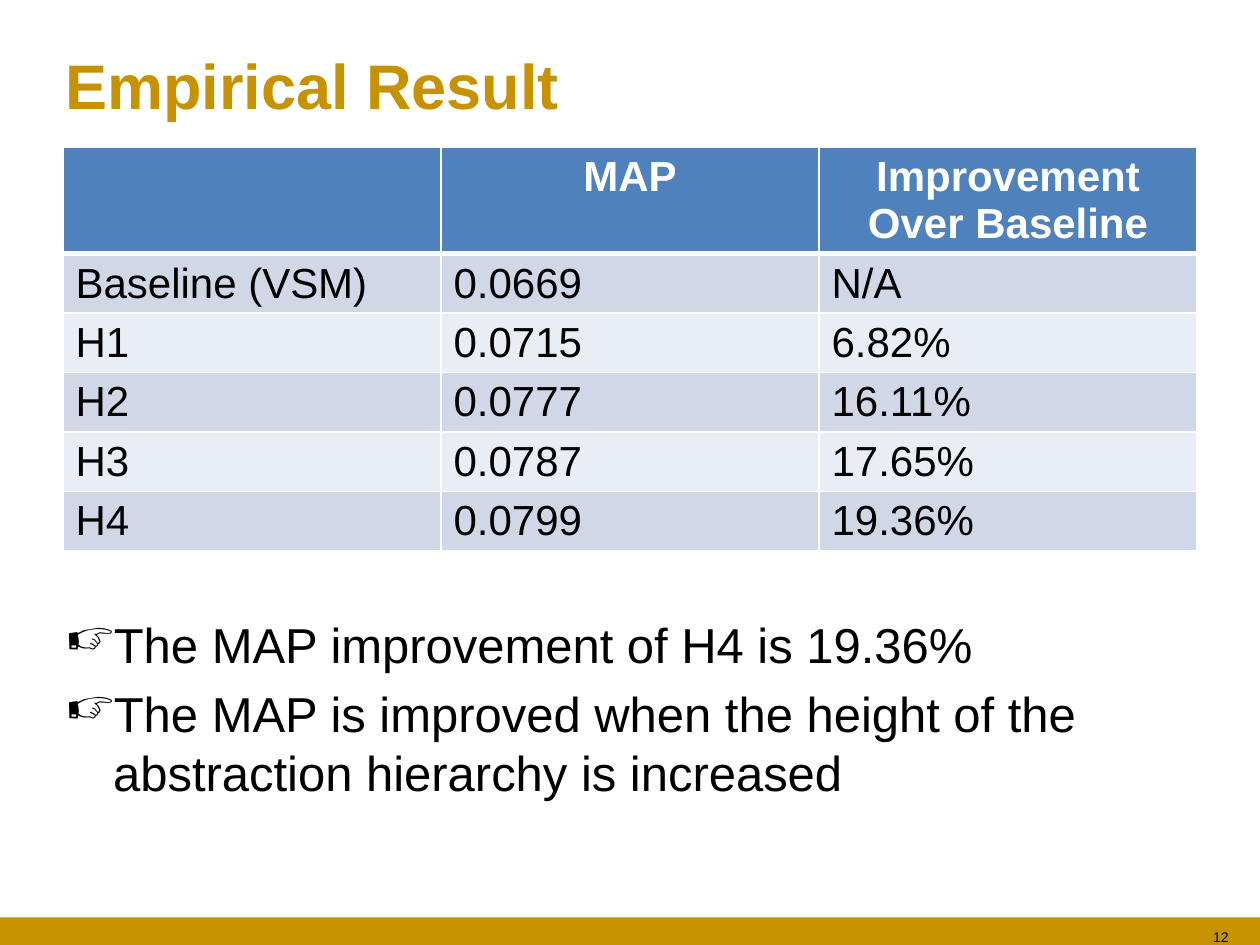
from dataclasses import dataclass
from typing import NamedTuple

from lxml.etree import SubElement
from pptx import Presentation
from pptx.dml.color import RGBColor as Rgb
from pptx.enum.shapes import MSO_SHAPE as Shape
from pptx.enum.text import MSO_ANCHOR as Anchor, PP_ALIGN as Align
from pptx.oxml.ns import qn
from pptx.util import Emu, Inches, Pt

WIDTH, HEIGHT = Inches(10), Inches(7.5)


@dataclass(frozen=True)
class Theme:
    font: str = "Arial"
    gold: str = "C69200"
    header: str = "4F81BD"
    bands: tuple = ("D0D8E8", "E9EDF4")
    white: str = "FFFFFF"
    black: str = "000000"
    title_size: int = 36
    body_size: int = 28
    table_size: int = 24
    number_size: int = 8


class Area(NamedTuple):
    """A box given as shares of the slide's width and height."""
    left: float
    top: float
    width: float
    height: float

    def box(self) -> tuple:
        return (Emu(round(self.left * WIDTH)), Emu(round(self.top * HEIGHT)),
                Emu(round(self.width * WIDTH)), Emu(round(self.height * HEIGHT)))


class Result(NamedTuple):
    method: str
    precision: str
    improvement: str


THEME = Theme()
TITLE_AREA = Area(0.042, 0.32 / 7.5, 0.908, 0.7 / 7.5)
TABLE_AREA = Area(0.05, 1.17 / 7.5, 0.9, 3.19 / 7.5)
FINDINGS_AREA = Area(0.042, 4.83 / 7.5, 0.9, 2.17 / 7.5)
FOOTER_AREA = Area(0, 7.28 / 7.5, 1, 0.25 / 7.5)
NUMBER_AREA = Area(0.843, 7.32 / 7.5, 0.142, 0.25 / 7.5)
HEADER_SHARE = 0.26

RESULTS = [
    Result("", "MAP", "Improvement Over Baseline"),
    Result("Baseline (VSM)", "0.0669", "N/A"),
    Result("H1", "0.0715", "6.82%"),
    Result("H2", "0.0777", "16.11%"),
    Result("H3", "0.0787", "17.65%"),
    Result("H4", "0.0799", "19.36%"),
]
FINDINGS = [
    "The MAP improvement of H4 is 19.36%",
    "The MAP is improved when the height of the abstraction hierarchy is increased",
]


def write(frame, *lines: str, size: int, color: str = THEME.black,
          bold: bool = False, align=Align.LEFT, bullet: str = "",
          anchor=Anchor.TOP) -> None:
    frame.word_wrap = True
    frame.vertical_anchor = anchor
    for index, line in enumerate(lines):
        paragraph = frame.add_paragraph() if index else frame.paragraphs[0]
        paragraph.alignment = align
        if bullet:
            properties = paragraph._p.get_or_add_pPr()
            properties.set("marL", str(Inches(0.38)))
            properties.set("indent", str(-Inches(0.38)))
            SubElement(properties, qn("a:buChar"), char=bullet)
            if index:
                paragraph.space_before = Pt(size * 0.2)
        run = paragraph.add_run()
        run.text = line
        run.font.name, run.font.size, run.font.bold = THEME.font, Pt(size), bold
        run.font.color.rgb = Rgb.from_string(color)


def add_text(slide, area: Area, *lines: str, **style) -> None:
    write(slide.shapes.add_textbox(*area.box()).text_frame, *lines, **style)


def add_title(slide, text: str) -> None:
    title = slide.shapes.title
    title.left, title.top, title.width, title.height = TITLE_AREA.box()
    write(title.text_frame, text, size=THEME.title_size, color=THEME.gold,
          bold=True, anchor=Anchor.MIDDLE)


def set_borders(cell, top: int, bottom: int) -> None:
    properties = cell._tc.get_or_add_tcPr()
    for side, points in (("L", 1), ("R", 1), ("T", top), ("B", bottom)):
        line = SubElement(properties, qn(f"a:ln{side}"), w=str(Pt(points)))
        fill = SubElement(line, qn("a:solidFill"))
        SubElement(fill, qn("a:srgbClr"), val=THEME.white)


def add_results(slide, results: list[Result]) -> None:
    box = TABLE_AREA.box()
    table = slide.shapes.add_table(len(results), len(Result._fields), *box).table
    header_height = round(box[3] * HEADER_SHARE)
    body_height = (box[3] - header_height) // (len(results) - 1)
    for row, result in enumerate(results):
        is_header = row == 0
        table.rows[row].height = Emu(header_height if is_header else body_height)
        fill = THEME.header if is_header else THEME.bands[(row - 1) % 2]
        for column, text in enumerate(result):
            cell = table.cell(row, column)
            set_borders(cell, top=3 if row == 1 else 1, bottom=3 if is_header else 1)
            cell.fill.solid()
            cell.fill.fore_color.rgb = Rgb.from_string(fill)
            write(cell.text_frame, text, size=THEME.table_size, bold=is_header,
                  color=THEME.white if is_header else THEME.black,
                  align=Align.CENTER if is_header else Align.LEFT)


def add_footer(slide, number: str) -> None:
    bar = slide.shapes.add_shape(Shape.RECTANGLE, *FOOTER_AREA.box())
    bar.shadow.inherit = False
    bar.fill.solid()
    bar.fill.fore_color.rgb = Rgb.from_string(THEME.gold)
    bar.line.fill.background()
    add_text(slide, NUMBER_AREA, number, size=THEME.number_size, align=Align.RIGHT)


def main() -> None:
    deck = Presentation()
    deck.slide_width, deck.slide_height = WIDTH, HEIGHT
    slide = deck.slides.add_slide(deck.slide_layouts.get_by_name("Title Only"))
    add_title(slide, "Empirical Result")
    add_results(slide, RESULTS)
    add_text(slide, FINDINGS_AREA, *FINDINGS, size=THEME.body_size, bullet="☞")
    add_footer(slide, "12")
    deck.save("out.pptx")


if __name__ == "__main__":
    main()
